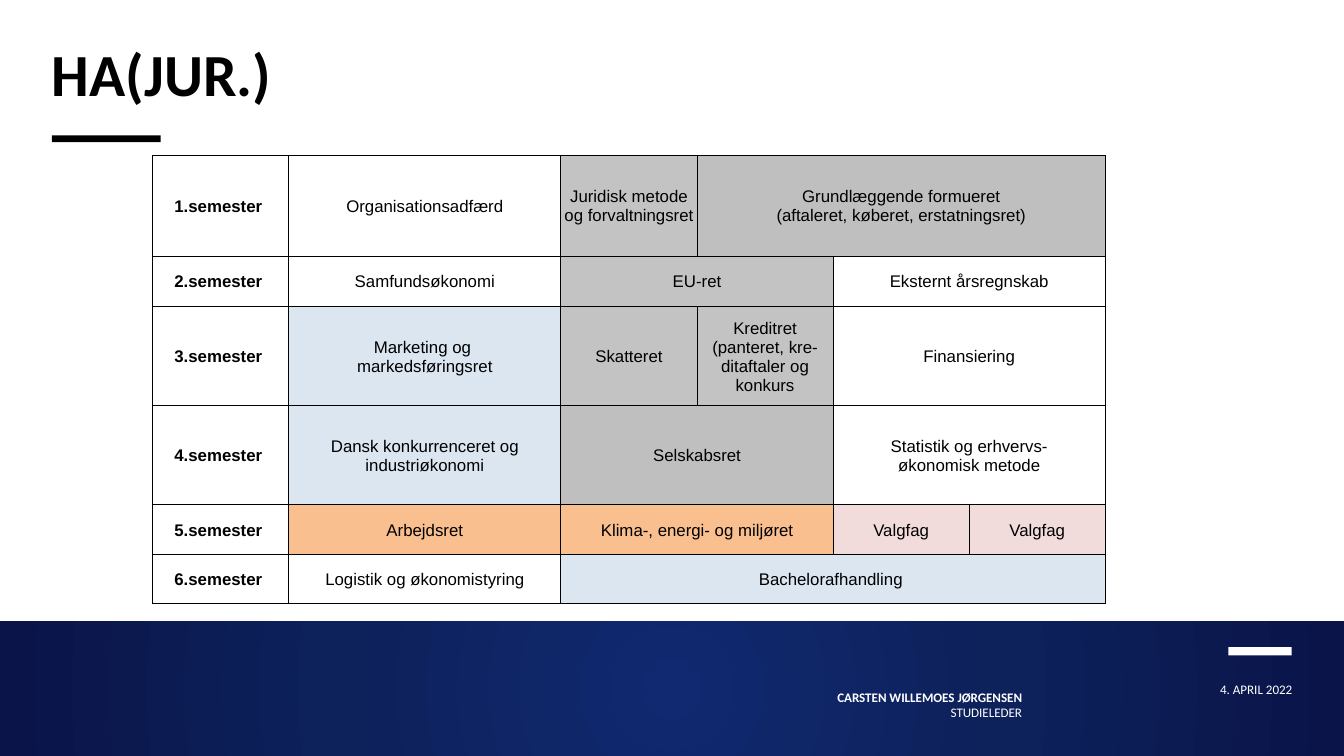
from dataclasses import dataclass
from typing import NamedTuple

from lxml.etree import SubElement
from pptx import Presentation
from pptx.dml.color import RGBColor as RGB
from pptx.enum.shapes import MSO_SHAPE as Shape
from pptx.enum.text import MSO_ANCHOR as Anchor, PP_ALIGN as Align
from pptx.oxml import parse_xml
from pptx.oxml.ns import nsdecls, qn
from pptx.util import Inches, Pt


@dataclass(frozen=True)
class Theme:
    black: str = "000000"
    white: str = "FFFFFF"
    law: str = "C3C3C4"
    core_law: str = "BFBFBF"
    mixed: str = "DCE6F1"
    orange: str = "FABF8F"
    elective: str = "F2DCDB"
    band: tuple = ((0, "102970"), (50, "0D215A"), (100, "0A1449"))
    head_font: str = "Calibri"
    body_font: str = "Arial"
    title_size: float = 32
    table_size: float = 9
    footer_size: float = 7
    border: float = 0.5


class Box(NamedTuple):
    left: float
    top: float
    width: float
    height: float


class Course(NamedTuple):
    name: str
    fill: str
    span: int = 1


class Semester(NamedTuple):
    weight: int
    courses: tuple


class Line(NamedTuple):
    text: str
    bold: bool = False


T = Theme()
WIDTH = Inches(10)
HEIGHT = WIDTH * 9 // 16
COLUMNS = (1, 2, 1, 1, 1, 1)
PLAN = (
    Semester(75, (
        Course("Organisationsadfærd", T.white),
        Course("Juridisk metode og forvaltningsret", T.law),
        Course("Grundlæggende formueret\n(aftaleret, køberet, erstatningsret)", T.core_law, 3))),
    Semester(38, (
        Course("Samfundsøkonomi", T.white),
        Course("EU-ret", T.law, 2),
        Course("Eksternt årsregnskab", T.white, 2))),
    Semester(74, (
        Course("Marketing og \nmarkedsføringsret", T.mixed),
        Course("Skatteret", T.law),
        Course("Kreditret\n(panteret, kre-\nditaftaler og\nkonkurs", T.law),
        Course("Finansiering", T.white, 2))),
    Semester(74, (
        Course("Dansk konkurrenceret og\nindustriøkonomi", T.mixed),
        Course("Selskabsret", T.core_law, 2),
        Course("Statistik og erhvervs-\nøkonomisk metode", T.white, 2))),
    Semester(37, (
        Course("Arbejdsret", T.orange),
        Course("Klima-, energi- og miljøret", T.orange, 2),
        Course("Valgfag", T.elective),
        Course("Valgfag", T.elective))),
    Semester(37, (
        Course("Logistik og økonomistyring", T.white),
        Course("Bachelorafhandling ", T.mixed, 4))),
)


def place(box: Box) -> tuple:
    return tuple(int(share * side / 100) for share, side in zip(box, (WIDTH, HEIGHT) * 2))


def style(p, font: str, size: float, color: str, bold: bool, align) -> None:
    p.alignment = align
    p.font.name, p.font.size, p.font.bold = font, Pt(size), bold
    p.font.color.rgb = RGB.from_string(color)


def add_bar(s, box: Box, color: str):
    sp = s.shapes.add_shape(Shape.RECTANGLE, *place(box))
    sp.shadow.inherit = False
    sp.fill.solid()
    sp.fill.fore_color.rgb = RGB.from_string(color)
    sp.line.fill.background()
    return sp


def add_band(s, box: Box) -> None:
    sp = add_bar(s, box, T.band[0][1])
    stops = "".join(f'<a:gs pos="{pos * 1000}"><a:srgbClr val="{color}"/></a:gs>'
                    for pos, color in T.band)
    center = " ".join(f'{side}="50000"' for side in "ltrb")
    solid = sp.element.spPr.find(qn("a:solidFill"))
    solid.getparent().replace(solid, parse_xml(
        f'<a:gradFill {nsdecls("a")} rotWithShape="1"><a:gsLst>{stops}</a:gsLst>'
        f'<a:path path="circle"><a:fillToRect {center}/></a:path></a:gradFill>'))


def add_text(s, box: Box, lines: tuple, size: float, color: str, spacing: float,
             align=Align.RIGHT, anchor=Anchor.TOP, inset: float = 0) -> None:
    tf = s.shapes.add_textbox(*place(box)).text_frame
    tf.word_wrap, tf.vertical_anchor = True, anchor
    tf.margin_left = tf.margin_right = tf.margin_bottom = 0
    tf.margin_top = Inches(inset)
    for i, line in enumerate(lines):
        p = tf.add_paragraph() if i else tf.paragraphs[0]
        p.text, p.line_spacing = line.text, spacing
        style(p, T.head_font, size, color, line.bold, align)


def add_borders(cell) -> None:
    tc_pr = cell._tc.get_or_add_tcPr()
    for side in ("lnL", "lnR", "lnT", "lnB"):
        ln = SubElement(tc_pr, qn(f"a:{side}"), w=str(Pt(T.border)))
        SubElement(SubElement(ln, qn("a:solidFill")), qn("a:srgbClr"), val=T.black)


def fill_cell(cell, course: Course, bold: bool) -> None:
    cell.fill.solid()
    cell.fill.fore_color.rgb = RGB.from_string(course.fill)
    cell.vertical_anchor = Anchor.MIDDLE
    cell.margin_left = cell.margin_right = cell.margin_top = Inches(0.01)
    cell.margin_bottom = 0
    p = cell.text_frame.paragraphs[0]
    p.text = course.name
    style(p, T.body_font, T.table_size, T.black, bold, Align.CENTER)


def add_plan(s, box: Box) -> None:
    frame = place(box)
    table = s.shapes.add_table(len(PLAN), len(COLUMNS), *frame).table
    table.first_row = table.horz_banding = False
    for column, units in zip(table.columns, COLUMNS):
        column.width = int(frame[2] * units / sum(COLUMNS))
    total = sum(semester.weight for semester in PLAN)
    for r, semester in enumerate(PLAN):
        table.rows[r].height = int(frame[3] * semester.weight / total)
        for c in range(len(COLUMNS)):
            add_borders(table.cell(r, c))
        c = 0
        for course in (Course(f"{r + 1}.semester ", T.white), *semester.courses):
            cell = table.cell(r, c)
            if course.span > 1:
                cell.merge(table.cell(r, c + course.span - 1))
            fill_cell(cell, course, bold=c == 0)
            c += course.span


def main() -> None:
    prs = Presentation()
    prs.slide_width, prs.slide_height = WIDTH, HEIGHT
    s = prs.slides.add_slide(prs.slide_layouts[6])
    add_band(s, Box(0, 82.2, 100, 17.8))
    add_text(s, Box(77.1, 87.5, 19.05, 6.2), (Line("4. APRIL 2022"),),
             T.footer_size, T.white, 0.95, inset=0.21)
    add_bar(s, Box(91.4, 85.6, 4.7, 1.1), T.white)
    add_text(s, Box(51.6, 89.6, 24.45, 5.7),
             (Line("CARSTEN WILLEMOES JØRGENSEN", True), Line("STUDIELEDER")),
             T.footer_size, T.white, 0.95, inset=0.1)
    add_bar(s, Box(3.86, 17.9, 8.1, 0.9), T.black)
    add_text(s, Box(3.86, 3.2, 92.3, 11.2), (Line("HA(JUR.)", True),),
             T.title_size, T.black, 0.83, Align.LEFT, Anchor.BOTTOM)
    add_plan(s, Box(11.35, 20.6, 70.9, 59.3))
    prs.save("out.pptx")


if __name__ == "__main__":
    main()
